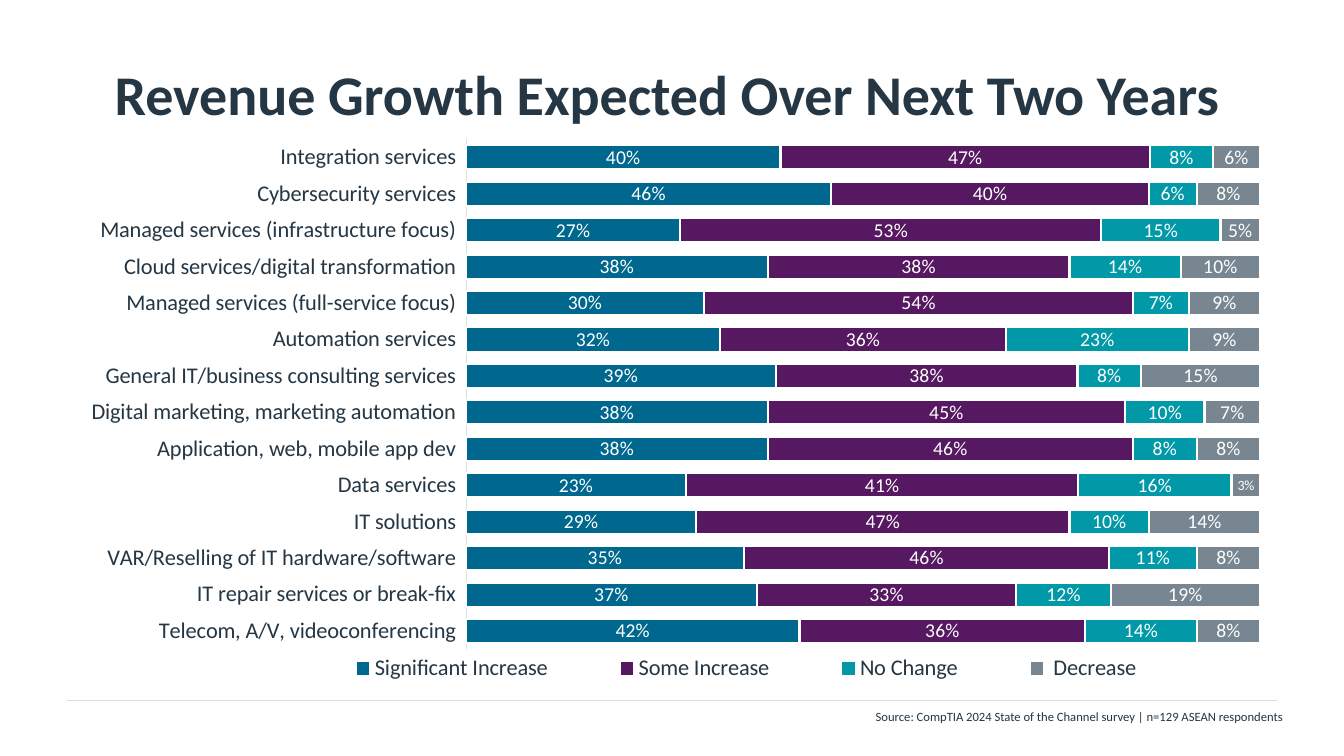
from lxml.etree import SubElement
from pptx import Presentation
from pptx.chart.data import CategoryChartData
from pptx.dml.color import RGBColor
from pptx.enum.chart import XL_CHART_TYPE, XL_LABEL_POSITION, XL_LEGEND_POSITION, XL_TICK_LABEL_POSITION, XL_TICK_MARK
from pptx.enum.shapes import MSO_CONNECTOR
from pptx.enum.text import MSO_ANCHOR, PP_ALIGN
from pptx.oxml import parse_xml
from pptx.oxml.ns import nsdecls, qn
from pptx.util import Pt

PX = 9525
FONT = "Calibri"
COLORS = {
    "background": "FEFFFE", "text": "253644", "rule": "DADFE1", "axis": "D8E1EA",
    "Significant Increase": "00688E", "Some Increase": "561861",
    "No Change": "0198A7", " Decrease": "778691",
}
SERIES = ["Significant Increase", "Some Increase", "No Change", " Decrease"]
SMALL_LABEL = ("Data services", " Decrease")
GROWTH = {
    "Telecom, A/V, videoconferencing": (42, 36, 14, 8),
    "IT repair services or break-fix": (37, 33, 12, 19),
    "VAR/Reselling of IT hardware/software": (35, 46, 11, 8),
    "IT solutions": (29, 47, 10, 14),
    "Data services": (23, 41, 16, 3),
    "Application, web, mobile app dev": (38, 46, 8, 8),
    "Digital marketing, marketing automation": (38, 45, 10, 7),
    "General IT/business consulting services": (39, 38, 8, 15),
    "Automation services": (32, 36, 23, 9),
    "Managed services (full-service focus)": (30, 54, 7, 9),
    "Cloud services/digital transformation": (38, 38, 14, 10),
    "Managed services (infrastructure focus)": (27, 53, 15, 5),
    "Cybersecurity services": (46, 40, 6, 8),
    "Integration services": (40, 47, 8, 6),
}


def px(*lengths):
    """Turn pixel lengths into EMU."""
    return [n * PX for n in lengths]


def rgb(name):
    """Return the named colour."""
    return RGBColor.from_string(COLORS[name])


def apply(obj, **values):
    """Set each given attribute on an object."""
    for key, value in values.items():
        setattr(obj, key, value)


def set_font(font, size, color="text", bold=False):
    """Format a font."""
    apply(font, name=FONT, size=Pt(size), bold=bold)
    font.color.rgb = rgb(color)


def set_line(line, color, width):
    """Format a line."""
    line.color.rgb = rgb(color)
    line.width = Pt(width)


def add_text(s, box, text, size, align, bold=False, **frame):
    """Add a text box with one paragraph."""
    tf = s.shapes.add_textbox(*px(*box)).text_frame
    apply(tf, word_wrap=True, **frame)
    p = tf.paragraphs[0]
    p.alignment = align
    r = p.add_run()
    r.text = text
    set_font(r.font, size, bold=bold)


def add_rule(s, x1, x2, y):
    """Add a thin horizontal line."""
    sp = s.shapes.add_connector(MSO_CONNECTOR.STRAIGHT, *px(x1, y, x2, y))
    set_line(sp.line, "rule", 0.5)
    SubElement(sp._element.spPr, qn("a:effectLst"))


def set_layout(parent, index, x, y, w, h, inner=False):
    """Place a chart part by fractions of the chart area."""
    old = parent.find(qn("c:layout"))
    if old is not None:
        parent.remove(old)
    target = '<c:layoutTarget val="inner"/>' if inner else ""
    sizes = "".join(f'<c:{tag} val="{n}"/>' for tag, n in zip("xywh", (x, y, w, h)))
    parent.insert(index, parse_xml(
        f'<c:layout {nsdecls("c")}><c:manualLayout>{target}<c:xMode val="edge"/>'
        f'<c:yMode val="edge"/>{sizes}</c:manualLayout></c:layout>'))


def format_axes(chart):
    """Format the category axis and hide the value axis."""
    axis = chart.category_axis
    apply(axis, major_tick_mark=XL_TICK_MARK.NONE, minor_tick_mark=XL_TICK_MARK.NONE,
          tick_label_position=XL_TICK_LABEL_POSITION.LOW, has_major_gridlines=False)
    set_font(axis.tick_labels.font, 16)
    set_line(axis.format.line, "axis", 0.75)
    apply(chart.value_axis, visible=False, has_major_gridlines=False,
          minimum_scale=0, maximum_scale=1.02)


def format_series(series):
    """Colour one series and label its bars."""
    series.format.fill.solid()
    series.format.fill.fore_color.rgb = rgb(series.name)
    set_line(series.format.line, "background", 1.5)
    labels = series.data_labels
    apply(labels, show_value=True, number_format="0%", number_format_is_linked=False,
          position=XL_LABEL_POSITION.CENTER)
    set_font(labels.font, 14, "background")
    category, name = SMALL_LABEL
    if series.name == name:
        label = series.points[list(GROWTH).index(category)].data_label
        set_font(label.font, 10, "background")
        label.position = XL_LABEL_POSITION.CENTER


def add_growth_chart(s, box):
    """Add the stacked bar chart."""
    data = CategoryChartData(number_format="0%")
    data.categories = list(GROWTH)
    for name, values in zip(SERIES, zip(*GROWTH.values())):
        data.add_series(name, [v / 100 for v in values])
    chart = s.shapes.add_chart(XL_CHART_TYPE.BAR_STACKED_100, *px(*box), data).chart
    apply(chart, has_title=False, has_legend=True)
    set_font(chart.font, 10)
    apply(chart.plots[0], gap_width=51, overlap=100, vary_by_categories=False)
    format_axes(chart)
    for series in chart.plots[0].series:
        format_series(series)
    apply(chart.legend, position=XL_LEGEND_POSITION.BOTTOM, include_in_layout=False)
    set_font(chart.legend.font, 16)
    set_layout(chart.legend._element, 1, 0.18, 0.93, 0.73, 0.07)
    set_layout(chart._chartSpace.chart.plotArea, 0, 0.32, 0, 0.65, 0.93, inner=True)


def main():
    """Build and save the slide."""
    prs = Presentation()
    apply(prs, slide_width=1280 * PX, slide_height=720 * PX)
    s = prs.slides.add_slide(prs.slide_layouts[6])
    s.background.fill.solid()
    s.background.fill.fore_color.rgb = rgb("background")
    add_rule(s, 64, 1216, 667)
    add_text(s, (64, 29, 1152, 120), "Revenue Growth Expected Over Next Two Years", 40,
             PP_ALIGN.CENTER, bold=True, vertical_anchor=MSO_ANCHOR.MIDDLE, margin_left=0)
    add_growth_chart(s, (64, 132, 1187, 523))
    add_text(s, (608, 670, 623, 24),
             "Source: CompTIA 2024 State of the Channel survey | n=129 ASEAN respondents",
             9, PP_ALIGN.RIGHT)
    prs.save("out.pptx")


if __name__ == "__main__":
    main()
